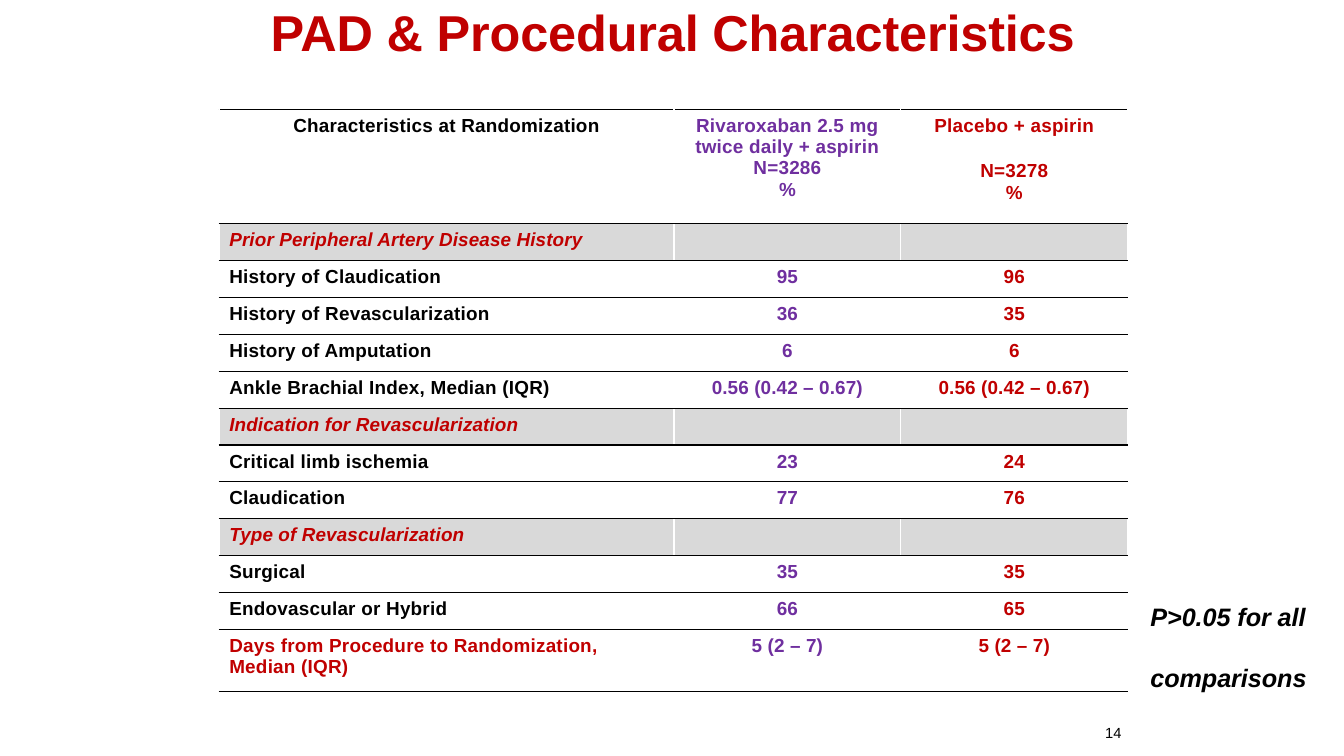
import pptx
import pptx.util
import pptx.dml.color
import pptx.enum.text
import pptx.oxml.ns
from lxml import etree

RED, PURPLE, BLACK, WHITE, GREY = "C00000", "6F2F9F", "000000", "FFFFFF", "D9D9D9"
ALIGN = pptx.enum.text.PP_ALIGN


def color(hex_string):
    return pptx.dml.color.RGBColor.from_string(hex_string)


class SlideBuilder:
    """Places elements on a grid whose columns and rows are 0.1 inch."""

    font = "Arial"
    table_size = 13.5
    cell_top = 0.6

    def __init__(self, presentation):
        self.slide = presentation.slides.add_slide(presentation.slide_layouts[6])

    def grid(self, units):
        return pptx.util.Inches(units / 10)

    def set_text(self, text_frame, text, size, hex_string, bold=True, italic=False,
                 spacing=0.1, align=ALIGN.LEFT, gaps=()):
        """Fill a text frame; gaps are the points before each later paragraph."""
        text_frame.text = text
        for paragraph in text_frame.paragraphs:
            paragraph.alignment = align
            for run in paragraph.runs:
                run.font.name = self.font
                run.font.size = pptx.util.Pt(size)
                run.font.bold = bold
                run.font.italic = italic
                run.font.color.rgb = color(hex_string)
                run.font._element.set("spc", str(round(spacing * 100)))
        for paragraph, gap in zip(text_frame.paragraphs[1:], gaps):
            paragraph.space_before = pptx.util.Pt(gap)

    def text(self, left, top, width, height, text, size, hex_string, inset=0.1, **style):
        box = self.slide.shapes.add_textbox(*map(self.grid, (left, top, width, height)))
        frame = box.text_frame
        frame.word_wrap = True
        frame.margin_left = frame.margin_right = frame.margin_bottom = 0
        frame.margin_top = self.grid(inset)
        self.set_text(frame, text, size, hex_string, **style)

    def border(self, cell):
        """White rules between columns, black rules between rows."""
        properties = cell._tc.get_or_add_tcPr()
        qn = pptx.oxml.ns.qn
        for side, hex_string in zip("LRTB", (WHITE, WHITE, BLACK, BLACK)):
            line = etree.SubElement(properties, qn(f"a:ln{side}"), w="12700")
            fill = etree.SubElement(line, qn("a:solidFill"))
            etree.SubElement(fill, qn("a:srgbClr"), val=hex_string)

    def table(self, left, top, widths, heights):
        frame = self.slide.shapes.add_table(
            len(heights), len(widths),
            *map(self.grid, (left, top, sum(widths), sum(heights))))
        table = frame.table
        table.first_row = table.horz_banding = False
        for column, width in zip(table.columns, widths):
            column.width = self.grid(width)
        for row, height in zip(table.rows, heights):
            row.height = self.grid(height)
        return table

    def cell(self, cell, text, hex_string, fill=None, indent=0, **style):
        cell.margin_left = self.grid(indent)
        cell.margin_right = cell.margin_bottom = 0
        cell.margin_top = self.grid(self.cell_top)
        self.border(cell)
        if fill:
            cell.fill.solid()
            cell.fill.fore_color.rgb = color(fill)
        else:
            cell.fill.background()
        if text:
            self.set_text(cell.text_frame, text, self.table_size, hex_string, **style)


# Table content: header texts with paragraph gaps, then the body rows
HEADER = [
    ("Characteristics at Randomization", BLACK, ()),
    ("Rivaroxaban 2.5 mg\vtwice daily + aspirin\vN=3286\n%", PURPLE, (0.6,)),
    ("Placebo + aspirin\nN=3278\n%", RED, (17, 0.6)),
]
BODY = [
    ("Prior Peripheral Artery Disease History",),
    ("History of Claudication", "95", "96"),
    ("History of Revascularization", "36", "35"),
    ("History of Amputation", "6", "6"),
    ("Ankle Brachial Index, Median (IQR)", "0.56 (0.42 – 0.67)", "0.56 (0.42 – 0.67)"),
    ("Indication for Revascularization",),
    ("Critical limb ischemia", "23", "24"),
    ("Claudication", "77", "76"),
    ("Type of Revascularization",),
    ("Surgical", "35", "35"),
    ("Endovascular or Hybrid", "66", "65"),
    ("Days from Procedure to Randomization,\vMedian (IQR)", "5 (2 – 7)", "5 (2 – 7)"),
]


def main():
    presentation = pptx.Presentation()
    presentation.slide_width = pptx.util.Inches(13.33)
    presentation.slide_height = pptx.util.Inches(7.5)
    builder = SlideBuilder(presentation)

    # Title
    builder.text(26.4, 0, 80.6, 6.3, "PAD & Procedural Characteristics", 36, RED,
                 spacing=-0.1, align=ALIGN.CENTER)

    # Table
    heights = [11.3] + [3.66] * (len(BODY) - 1) + [6.2]
    table = builder.table(21.75, 10.9, [45.1, 22.5, 22.5], heights)
    for index, (text, hex_string, gaps) in enumerate(HEADER):
        builder.cell(table.cell(0, index), text, hex_string, spacing=0.2,
                     align=ALIGN.CENTER, gaps=gaps)
    for row, (label, *values) in enumerate(BODY, start=1):
        section = not values
        fill = GREY if section else None
        label_color = RED if section or row == len(BODY) else BLACK
        builder.cell(table.cell(row, 0), label, label_color, fill, indent=1,
                     italic=section, spacing=0.1 if section else 0.2)
        for column, hex_string in ((1, PURPLE), (2, RED)):
            value = "" if section else values[column - 1]
            builder.cell(table.cell(row, column), value, hex_string, fill,
                         align=ALIGN.CENTER)

    # Significance note
    builder.text(114.1, 59.6, 16.5, 9.1, "P>0.05 for all\ncomparisons", 18, BLACK,
                 italic=True, spacing=-0.05, gaps=(22,))

    # Slide number
    builder.text(109.6, 71.6, 1.9, 2.1, "14", 10.5, BLACK, inset=0.2, bold=False)

    presentation.save("out.pptx")


if __name__ == "__main__":
    main()
